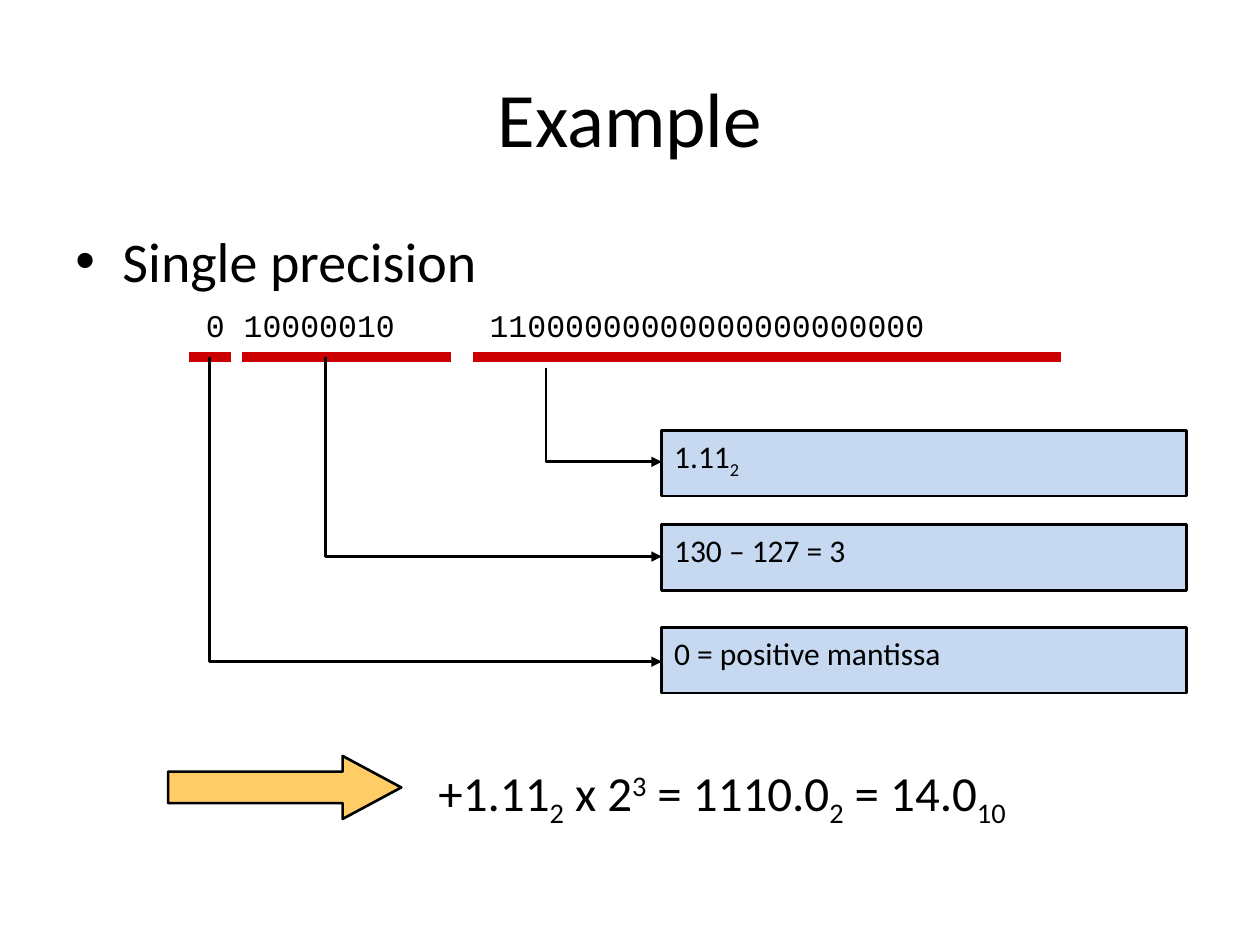
import pptx
import pptx.dml.color
import pptx.enum.shapes
import pptx.enum.text
import pptx.oxml.ns
import pptx.util
from lxml import etree
from pptx.util import Cm

SHAPE = pptx.enum.shapes.MSO_SHAPE
ALIGN = pptx.enum.text.PP_ALIGN
ANCHOR = pptx.enum.text.MSO_ANCHOR
qn = pptx.oxml.ns.qn

BLACK, RED, BLUE, GOLD = "000000", "CC0000", "C6D9F1", "FFCC66"
SUB, SUPER = -25000, 30000


def color(hex_string):
    return pptx.dml.color.RGBColor.from_string(hex_string)


def set_values(target, values):
    for name, value in values.items():
        setattr(target, name, value)


def set_line(shape, line_color, width):
    shape.line.color.rgb = color(line_color)
    shape.line.width = pptx.util.Pt(width)


def write(shape, runs, size, font="Calibri", align=ALIGN.LEFT, **frame):
    """Fill a shape with one paragraph of (text, baseline) runs."""
    text_frame = shape.text_frame
    set_values(text_frame, {"word_wrap": True, "vertical_anchor": ANCHOR.TOP, **frame})
    paragraph = text_frame.paragraphs[0]
    paragraph.alignment = align
    for text, baseline in runs:
        run = paragraph.add_run()
        run.text = text
        set_values(run.font, {"size": pptx.util.Pt(size), "name": font})
        run.font.color.rgb = color(BLACK)
        if baseline:
            run.font._element.set("baseline", str(baseline))
    return paragraph


def add_text(slide, box, runs, size, **options):
    shape = slide.shapes.add_textbox(*map(Cm, box))
    return write(shape, runs, size, **options)


def add_bullet(paragraph, indent):
    properties = paragraph._p.get_or_add_pPr()
    properties.set("marL", str(Cm(indent)))
    properties.set("indent", str(-Cm(indent)))
    etree.SubElement(properties, qn("a:buFont"), typeface="Arial")
    etree.SubElement(properties, qn("a:buChar"), char="•")


def add_tab_stop(paragraph, position):
    tabs = etree.SubElement(paragraph._p.get_or_add_pPr(), qn("a:tabLst"))
    etree.SubElement(tabs, qn("a:tab"), pos=str(Cm(position)), algn="l")


def add_bar(slide, left, right, y):
    bar = slide.shapes.add_connector(
        pptx.enum.shapes.MSO_CONNECTOR.STRAIGHT, Cm(left), Cm(y), Cm(right), Cm(y))
    set_line(bar, RED, 6)
    etree.SubElement(bar._element.spPr, qn("a:effectLst"))


def add_block(slide, kind, box, fill):
    shape = slide.shapes.add_shape(kind, *map(Cm, box))
    shape.shadow.inherit = False
    shape.fill.solid()
    shape.fill.fore_color.rgb = color(fill)
    set_line(shape, BLACK, 1.5)
    return shape


def add_elbow_arrow(slide, x, top, right, bottom):
    builder = slide.shapes.build_freeform(Cm(x), Cm(top))
    builder.add_line_segments([(Cm(x), Cm(bottom)), (Cm(right), Cm(bottom))], close=False)
    shape = builder.convert_to_shape()
    shape.shadow.inherit = False
    shape.fill.background()
    set_line(shape, BLACK, 1.5)
    etree.SubElement(shape.line._get_or_add_ln(), qn("a:tailEnd"), type="triangle")


def main():
    presentation = pptx.Presentation()
    set_values(presentation, {"slide_width": Cm(25.4), "slide_height": Cm(19.05)})
    slide = presentation.slides.add_slide(presentation.slide_layouts[6])

    # Title and bullet
    add_text(slide, (1.27, 0.76, 22.86, 3.18), [("Example", 0)], 44,
             align=ALIGN.CENTER, vertical_anchor=ANCHOR.MIDDLE)
    bullet = add_text(slide, (1.27, 4.45, 22.86, 12.57), [("Single precision", 0)], 32)
    add_bullet(bullet, 0.95)

    # Bit pattern: sign and exponent, then the mantissa at a tab stop
    bits = add_text(slide, (2.75, 5.93, 19.69, 1.02),
                    [("0 10000010\t11000000000000000000000", 0)], 18,
                    font="Courier New", margin_left=Cm(1.4), margin_top=Cm(0.23))
    add_tab_stop(bits, 5.72)

    # Bars under the three fields
    bar_y = 7.2
    for left, right in ((3.81, 4.66), (4.87, 9.1), (9.53, 21.38)):
        add_bar(slide, left, right, bar_y)

    # Meaning of each field, with an arrow from the field to its box
    box_left = 13.34
    fields = (
        (8.68, [("1.11", 0), ("2", SUB)], 11.01, 7.41, 9.31),
        (10.58, [("130 – 127 = 3", 0)], 6.56, bar_y, 11.22),
        (12.65, [("0 = positive mantissa", 0)], 4.23, bar_y, 13.34),
    )
    for box_top, runs, *_ in fields:
        box = add_block(slide, SHAPE.RECTANGLE, (box_left, box_top, 10.58, 1.32), BLUE)
        write(box, runs, 18)
    for _, _, x, top, bottom in fields:
        add_elbow_arrow(slide, x, top, box_left, bottom)

    # Result
    add_text(slide, (8.59, 15.24, 14.07, 1.45),
             [("+1.11", 0), ("2", SUB), (" x 2", 0), ("3", SUPER), (" = 1110.0", 0),
              ("2", SUB), (" = 14.0", 0), ("10", SUB)], 28)
    arrow = add_block(slide, SHAPE.RIGHT_ARROW, (3.39, 15.24, 4.7, 1.27), GOLD)
    arrow.adjustments[1] = 0.93

    presentation.save("out.pptx")


if __name__ == "__main__":
    main()
